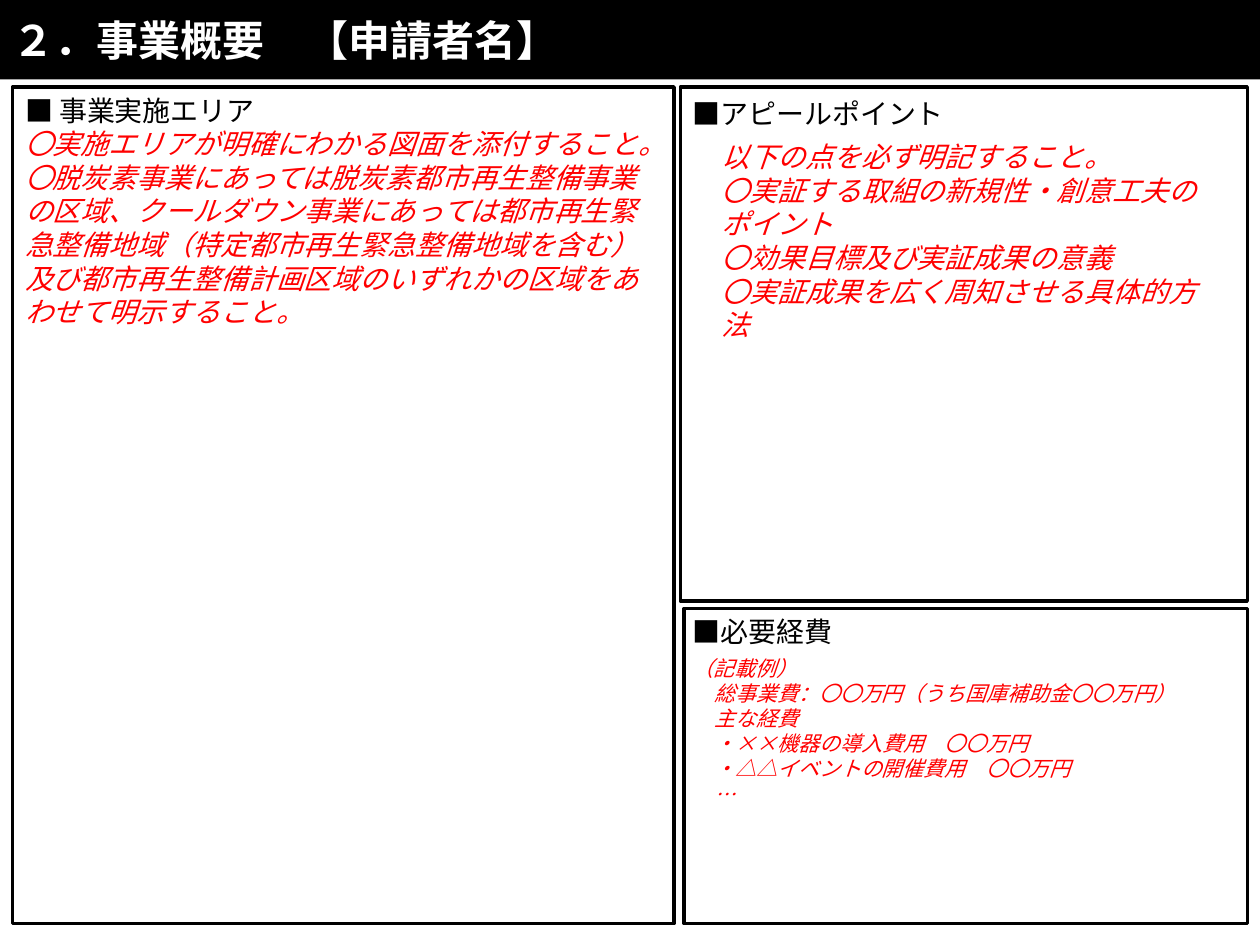
"""Build the project outline slide with its area, appeal and cost panels."""
from dataclasses import dataclass

from lxml import etree
from pptx import Presentation
from pptx import util as u
from pptx.enum import shapes, text
from pptx.dml.color import RGBColor
from pptx.oxml.ns import qn

FONT = "Noto Sans CJK JP"
HUES = {"ink": "000000", "note": "FF0000", "paper": "FFFFFF"}


@dataclass
class Line:
    words: str
    size: int = 16
    hue: str = "note"
    bold: bool = False
    slant: bool = True
    dent: float = 0


@dataclass
class Box:
    left: float
    top: float
    width: float
    height: float
    lines: tuple[Line, ...] = ()


def head(words: str) -> Line:
    """Return a panel heading."""
    return Line(words, hue="ink", slant=False)


def cost(words: str, dent: float = 0.17) -> Line:
    """Return a small line of the cost example."""
    return Line(words, size=12, dent=dent)


PANELS = (
    Box(5.4, 0.69, 4.5, 4.08),
    Box(0.1, 0.69, 5.25, 6.64, (
        head("■ 事業実施エリア"),
        Line("〇実施エリアが明確にわかる図面を添付すること。"),
        Line("〇脱炭素事業にあっては脱炭素都市再生整備事業の区域、"
             "クールダウン事業にあっては都市再生緊急整備地域"
             "（特定都市再生緊急整備地域を含む）及び都市再生整備計画区域の"
             "いずれかの区域をあわせて明示すること。"),
    )),
    Box(5.43, 4.83, 4.47, 2.5),
)
NOTES = (
    Box(5.4, 0.72, 4.5, 0.37, (head("■アピールポイント"),)),
    Box(5.63, 1.06, 4.1, 1.45, (
        Line("以下の点を必ず明記すること。"),
        Line("〇実証する取組の新規性・創意工夫のポイント"),
        Line("〇効果目標及び実証成果の意義"),
        Line("〇実証成果を広く周知させる具体的方法"),
    )),
    Box(5.4, 4.83, 4.5, 0.37, (head("■必要経費"),)),
    Box(5.4, 5.15, 4.1, 1.31, (
        cost("（記載例）", 0),
        cost("総事業費：〇〇万円（うち国庫補助金〇〇万円）"),
        cost("主な経費"),
        cost("・××機器の導入費用　〇〇万円"),
        cost("・△△イベントの開催費用　〇〇万円"),
        cost("…"),
    )),
)


def tint(name: str) -> RGBColor:
    """Return a named colour."""
    return RGBColor.from_string(HUES[name])


def place(box: Box) -> tuple[u.Length, ...]:
    """Return the position and size of a box."""
    return tuple(map(u.Inches, (box.left, box.top, box.width, box.height)))


def write(frame, lines: tuple[Line, ...], anchor=text.MSO_ANCHOR.TOP) -> None:
    """Fill a text frame with one paragraph per line."""
    frame.word_wrap = True
    frame.auto_size = text.MSO_AUTO_SIZE.NONE
    frame.vertical_anchor = anchor
    for i, line in enumerate(lines):
        para = frame.add_paragraph() if i else frame.paragraphs[0]
        para.alignment = text.PP_ALIGN.LEFT
        if line.dent:
            para._p.get_or_add_pPr().set("marL", str(u.Inches(line.dent)))
        run = para.add_run()
        run.text = line.words
        font = run.font
        font.name, font.size = FONT, u.Pt(line.size)
        font.bold, font.italic = line.bold, line.slant
        font.color.rgb = tint(line.hue)
        etree.SubElement(run._r.get_or_add_rPr(), qn("a:ea"), typeface=FONT)


def title(slide, box: Box) -> None:
    """Turn the title placeholder into the top band."""
    band = slide.shapes.title
    band.left, band.top, band.width, band.height = place(box)
    band.fill.solid()
    band.fill.fore_color.rgb = tint("ink")
    write(band.text_frame, box.lines, text.MSO_ANCHOR.MIDDLE)


def panel(slide, box: Box) -> None:
    """Draw an outlined panel."""
    shape = slide.shapes.add_shape(shapes.MSO_SHAPE.RECTANGLE, *place(box))
    shape.shadow.inherit = False
    shape.fill.background()
    shape.line.color.rgb = tint("ink")
    shape.line.width = u.Pt(2)
    write(shape.text_frame, box.lines)


def note(slide, box: Box) -> None:
    """Draw a text box."""
    write(slide.shapes.add_textbox(*place(box)).text_frame, box.lines)


def main() -> None:
    """Build and save the deck."""
    deck = Presentation()
    deck.slide_width, deck.slide_height = u.Inches(10), u.Inches(7.5)
    slide = deck.slides.add_slide(deck.slide_layouts[5])
    name = Line("２．事業概要　【申請者名】", 24, "paper", bold=True, slant=False)
    title(slide, Box(0, 0, 10, 0.63, (name,)))
    for box in PANELS:
        panel(slide, box)
    for box in NOTES:
        note(slide, box)
    deck.save("out.pptx")


if __name__ == "__main__":
    main()
